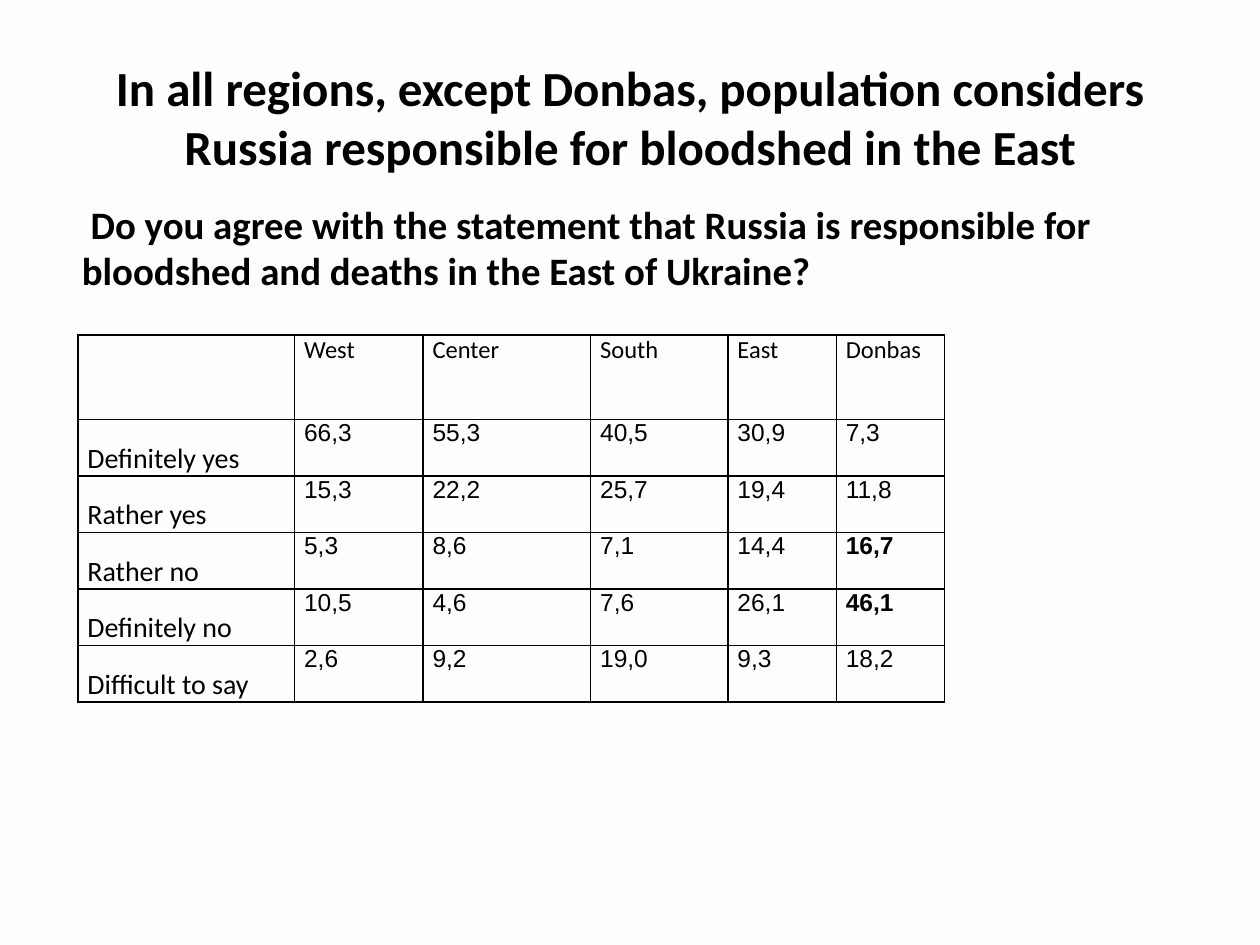
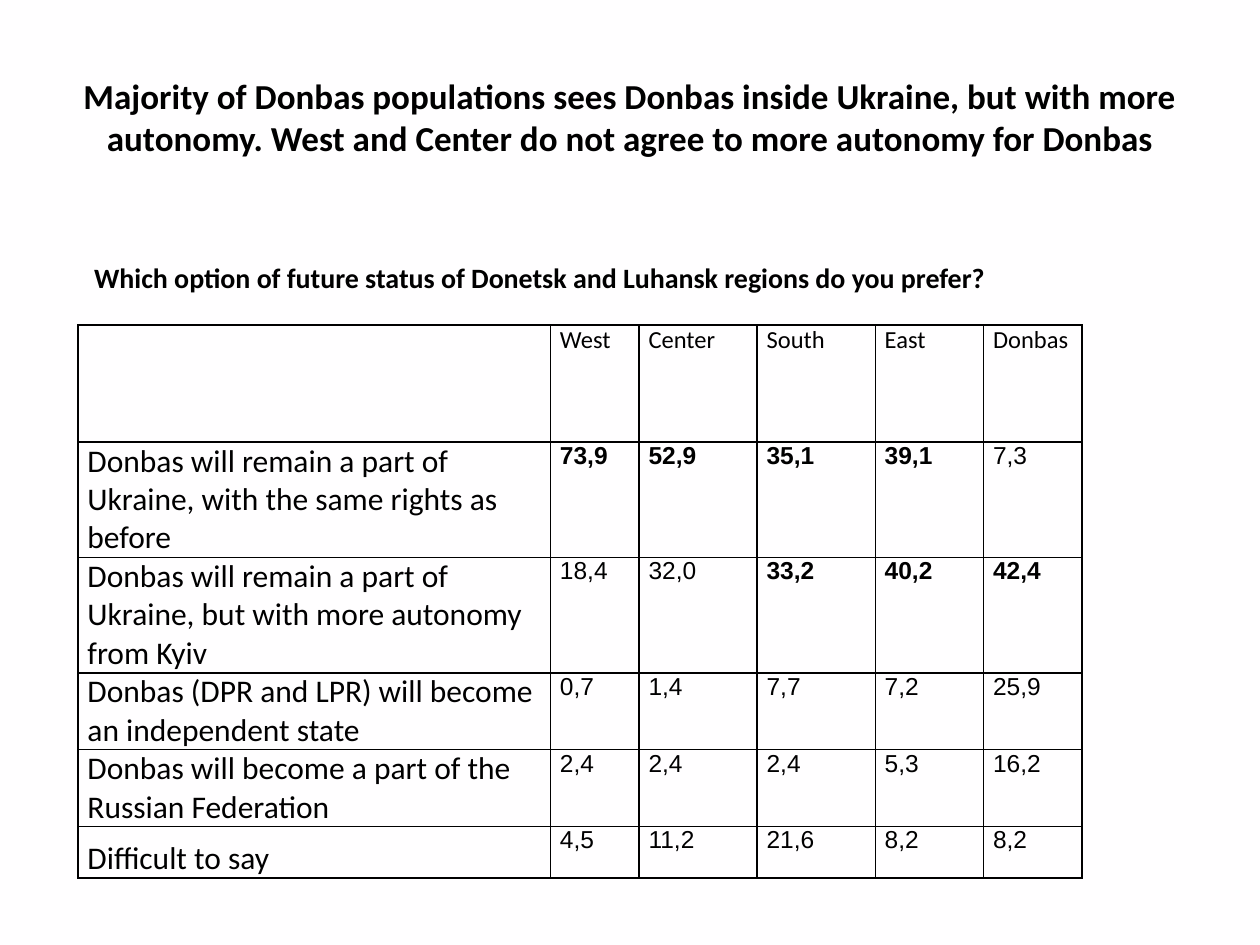
from pptx import Presentation
from pptx.dml.color import RGBColor
from pptx.enum.text import MSO_ANCHOR, MSO_AUTO_SIZE, PP_ALIGN
from pptx.oxml import parse_xml
from pptx.oxml.ns import nsdecls
from pptx.util import Pt

INK = RGBColor(0x00, 0x00, 0x00)
PAPER = RGBColor(0xFF, 0xFE, 0xFF)
REGIONS = ["", "West", "Center", "South", "East", "Donbas"]

SLIDES = [
    {
        "title": "In all regions, except Donbas, population considers "
                 "Russia responsible for bloodshed in the East",
        "title_size": 28,
        "question": [(" Do you agree with the statement that Russia is responsible "
                      "for bloodshed and deaths in the East of Ukraine?", 22.2)],
        "question_left": 39.6,
        "table_top": 191.4,
        "widths": [123.8, 73.4, 95.8, 78.5, 61.9, 61.9],
        "heights": [48.2] + [32.3] * 5,
        "label_size": 16,
        "rows": [
            ["Definitely yes", "66,3", "55,3", "40,5", "30,9", "7,3"],
            ["Rather yes", "15,3", "22,2", "25,7", "19,4", "11,8"],
            ["Rather no", "5,3", "8,6", "7,1", "14,4", "16,7"],
            ["Definitely no", "10,5", "4,6", "7,6", "26,1", "46,1"],
            ["Difficult to say", "2,6", "9,2", "19,0", "9,3", "18,2"],
        ],
        "bold": {"16,7", "46,1"},
    },
    {
        "title": "Majority of Donbas populations sees Donbas inside Ukraine, but with "
                 "more autonomy. West and Center do not agree to more autonomy for Donbas",
        "title_size": 20,
        "question": [(" ", 9), ("Which option of future status of Donetsk and "
                                "Luhansk regions do you prefer?", 16)],
        "question_left": 44.6,
        "table_top": 185.6,
        "widths": [270, 50.6, 67.5, 67.5, 61.9, 56.3],
        "heights": [67] + [29.3] * 5,
        "label_size": 18,
        "rows": [
            ["Donbas will remain a part of Ukraine, with the same rights as before",
             "73,9", "52,9", "35,1", "39,1", "7,3"],
            ["Donbas will remain a part of Ukraine, but with more autonomy from Kyiv",
             "18,4", "32,0", "33,2", "40,2", "42,4"],
            ["Donbas (DPR and LPR) will become an independent state",
             "0,7", "1,4", "7,7", "7,2", "25,9"],
            ["Donbas will become a part of the Russian Federation",
             "2,4", "2,4", "2,4", "5,3", "16,2"],
            ["Difficult to say", "4,5", "11,2", "21,6", "8,2", "8,2"],
        ],
        "bold": {"73,9", "52,9", "35,1", "39,1", "33,2", "40,2", "42,4"},
    },
]


def place(sp, left, top, width, height, anchor):
    sp.left, sp.top, sp.width, sp.height = Pt(left), Pt(top), Pt(width), Pt(height)
    tf = sp.text_frame
    tf.word_wrap = True
    tf.auto_size = MSO_AUTO_SIZE.NONE
    tf.vertical_anchor = anchor
    return tf.paragraphs[0]


def style(p, size, name="Calibri", bold=False):
    p.font.size = Pt(size)
    p.font.name = name
    p.font.bold = bold
    p.font.color.rgb = INK


prs = Presentation()
prs.slide_width, prs.slide_height = Pt(720), Pt(540)
fill = prs.slide_master.background.fill
fill.solid()
fill.fore_color.rgb = PAPER

for data in SLIDES:
    s = prs.slides.add_slide(prs.slide_layouts[1])

    p = place(s.shapes.title, 36, 21.6, 648, 90, MSO_ANCHOR.MIDDLE)
    p.text = data["title"]
    p.alignment = PP_ALIGN.CENTER
    style(p, data["title_size"], bold=True)

    left = data["question_left"]
    p = place(s.placeholders[1], left, 121, 684 - left, 50.4, MSO_ANCHOR.BOTTOM)
    for text, size in data["question"]:
        r = p.add_run()
        r.text = text
        r.font.size = Pt(size)
    style(p, size, bold=True)
    pPr = p._p.get_or_add_pPr()
    pPr.set("marL", "0")
    pPr.set("indent", "0")
    pPr.insert(0, parse_xml(f'<a:buNone {nsdecls("a")}/>'))

    rows = [REGIONS] + data["rows"]
    widths, heights = data["widths"], data["heights"]
    tbl = s.shapes.add_table(len(rows), len(REGIONS), Pt(44.6), Pt(data["table_top"]),
                             Pt(sum(widths)), Pt(sum(heights))).table
    tbl.first_row = False
    tbl.horz_banding = False
    for col, width in zip(tbl.columns, widths):
        col.width = Pt(width)
    for row, height in zip(tbl.rows, heights):
        row.height = Pt(height)

    for i, values in enumerate(rows):
        for j, text in enumerate(values):
            cell = tbl.cell(i, j)
            cell.margin_left = cell.margin_right = Pt(5.4)
            cell.margin_top = cell.margin_bottom = Pt(0)
            tcPr = cell._tc.get_or_add_tcPr()
            for side in ("lnL", "lnR", "lnT", "lnB"):
                tcPr.append(parse_xml(
                    f'<a:{side} {nsdecls("a")} w="{Pt(1)}"><a:solidFill>'
                    f'<a:srgbClr val="{INK}"/></a:solidFill></a:{side}>'))
            cell.fill.background()
            p = cell.text_frame.paragraphs[0]
            p.text = text
            if i == 0:
                style(p, 14)
            elif j == 0:
                cell.vertical_anchor = MSO_ANCHOR.BOTTOM
                style(p, data["label_size"])
            else:
                style(p, 14, "Arial", text in data["bold"])

prs.save("out.pptx")
